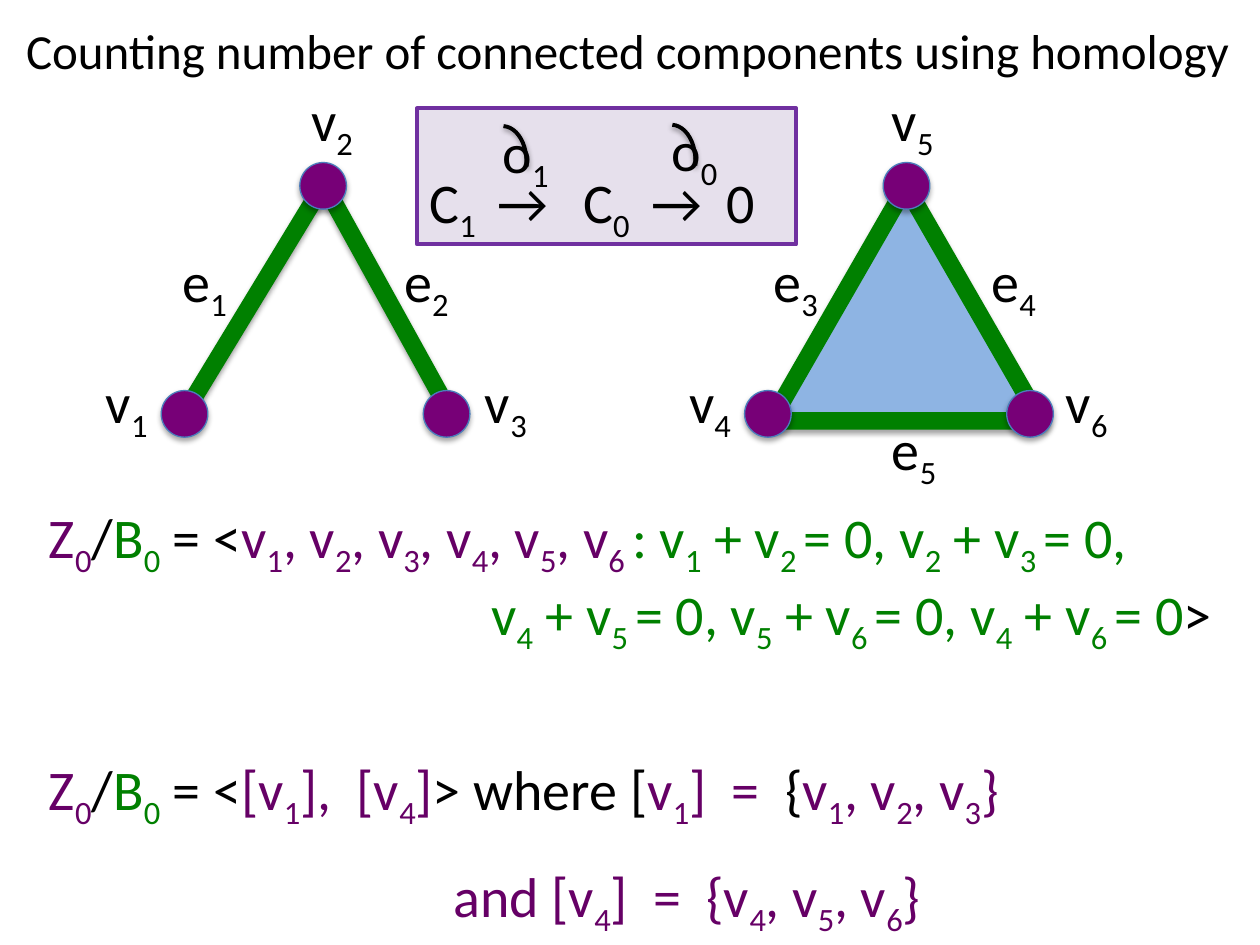
from typing import NamedTuple

import pptx
import pptx.dml.color
import pptx.enum.shapes
import pptx.enum.text
import pptx.oxml
import pptx.oxml.ns
import pptx.util
from lxml import etree

Inches = pptx.util.Inches
Pt = pptx.util.Pt
RGBColor = pptx.dml.color.RGBColor
Shapes = pptx.enum.shapes.MSO_SHAPE

BLACK = RGBColor(0x00, 0x00, 0x00)
GREEN = RGBColor(0x00, 0x80, 0x00)
PLUM = RGBColor(0x66, 0x00, 0x66)
NODE_FILL = RGBColor(0x77, 0x00, 0x77)
NODE_LINE = RGBColor(0x4B, 0x7E, 0xBC)
FACE_FILL = RGBColor(0x8E, 0xB4, 0xE3)
PANEL_FILL = RGBColor(0xE6, 0xE0, 0xEC)
PANEL_LINE = RGBColor(0x70, 0x30, 0xA0)

NODE_SIZE = 0.37
LABEL_WIDTH, LABEL_HEIGHT = 0.71, 0.64


class Label(NamedTuple):
    letter: str
    index: int
    left: float
    top: float


class Span(NamedTuple):
    """Text in one colour; every second piece between bars is a subscript."""
    text: str
    color: RGBColor = BLACK


class Line(NamedTuple):
    spans: list[Span]
    indent: float = 0
    format: dict = {}


NODES = [(left + shift, top) for shift in (0, 4.63)
         for left, top in ((1.28, 3.1), (3.36, 3.1), (2.38, 1.29))]

EDGES = [((2.57, 1.46), (3.57, 3.27)), ((1.47, 3.27), (2.57, 1.46))]

LABELS = [
    Label("v", 1, 0.74, 2.87), Label("v", 2, 2.37, 0.63), Label("v", 3, 3.75, 2.87),
    Label("v", 4, 5.37, 2.87), Label("v", 5, 6.98, 0.63), Label("v", 6, 8.36, 2.87),
    Label("e", 1, 1.35, 1.91), Label("e", 2, 3.11, 1.91), Label("e", 3, 6.04, 1.91),
    Label("e", 4, 7.77, 1.91), Label("e", 5, 6.98, 3.24),
]

BOUNDARIES = [(1, 3.77, 1.0), (0, 5.11, 0.99)]

QUOTIENT = [Span("Z|0|", PLUM), Span("/"), Span("B|0|", GREEN), Span(" = <")]

EQUATIONS = [
    Line(QUOTIENT + [
        Span("v|1|, v|2|, v|3|, v|4|, v|5|, v|6 |", PLUM),
        Span(": v|1| + v|2 |= 0, v|2| + v|3 |= 0,", GREEN)]),
    Line([Span("v|4| + v|5 |= 0, v|5| + v|6 |= 0, v|4| + v|6 |= 0", GREEN), Span(">")],
         indent=3.51),
    Line(QUOTIENT + [
        Span("[v|1|],  [v|4|]", PLUM), Span("> where ["), Span("v|1|]  =  ", PLUM),
        Span("{"), Span("v|1|, v|2|, v|3|}", PLUM)],
        format={"line_spacing": 1.4, "space_before": Pt(39)}),
    Line([Span("and [v|4|]  =  {v|4|, v|5|, v|6|}", PLUM)],
         indent=3.21, format={"line_spacing": 1.4}),
]


def add_shadow(shape, opacity: int, distance: float) -> None:
    """Give a shape or connector a soft black shadow straight below it."""
    shape._element.spPr.append(pptx.oxml.parse_xml(
        f'<a:effectLst {pptx.oxml.ns.nsdecls("a")}>'
        f'<a:outerShdw blurRad="{Pt(3.1)}" dist="{Pt(distance)}" dir="5400000" rotWithShape="0">'
        f'<a:srgbClr val="000000"><a:alpha val="{opacity * 1000}"/></a:srgbClr>'
        '</a:outerShdw></a:effectLst>'))


def add_figure(page, kind, left: float, top: float, width: float, height: float,
               fill: RGBColor | None, line: RGBColor, weight: float):
    shape = page.shapes.add_shape(kind, Inches(left), Inches(top), Inches(width), Inches(height))
    if fill is None:
        shape.fill.background()
    else:
        shape.fill.solid()
        shape.fill.fore_color.rgb = fill
    shape.line.color.rgb = line
    shape.line.width = Pt(weight)
    return shape


def add_spans(para, spans: list[Span], size: int) -> None:
    for text, color in spans:
        for place, piece in enumerate(text.split("|")):
            if not piece:
                continue
            span = para.add_run()
            span.text = piece
            for name, value in {"name": "Calibri", "size": Pt(size)}.items():
                setattr(span.font, name, value)
            span.font.color.rgb = color
            if place % 2:
                span._r.get_or_add_rPr().set("baseline", "-25000")


def add_text(page, left: float, top: float, width: float, height: float,
             lines: list[Line], size: int = 32):
    box = page.shapes.add_textbox(Inches(left), Inches(top), Inches(width), Inches(height))
    frame = box.text_frame
    frame.word_wrap = True
    frame.auto_size = pptx.enum.text.MSO_AUTO_SIZE.SHAPE_TO_FIT_TEXT
    for number, line in enumerate(lines):
        para = frame.add_paragraph() if number else frame.paragraphs[0]
        for name, value in line.format.items():
            setattr(para, name, value)
        if line.indent:
            properties = para._p.get_or_add_pPr()
            properties.set("marL", str(Inches(line.indent)))
            properties.set("indent", "0")
        add_spans(para, line.spans, size)
    return box


def add_tab_stops(para, stops: list[float]) -> None:
    tabs = etree.SubElement(para._p.get_or_add_pPr(), pptx.oxml.ns.qn("a:tabLst"))
    for stop in stops:
        etree.SubElement(tabs, pptx.oxml.ns.qn("a:tab"), pos=str(Inches(stop)), algn="l")


def add_graphs(page) -> None:
    triangle = add_figure(page, Shapes.ISOSCELES_TRIANGLE, 6.12, 1.48, 2.14, 1.86,
                          FACE_FILL, GREEN, 10)
    add_shadow(triangle, 35, 1.8)
    for start, end in EDGES:
        edge = page.shapes.add_connector(pptx.enum.shapes.MSO_CONNECTOR.STRAIGHT,
                                         *map(Inches, start + end))
        edge.line.color.rgb = GREEN
        edge.line.width = Pt(10)
        add_shadow(edge, 38, 1.6)
    for left, top in NODES:
        node = add_figure(page, Shapes.OVAL, left, top, NODE_SIZE, NODE_SIZE,
                          NODE_FILL, NODE_LINE, 0.75)
        add_shadow(node, 35, 1.8)
    for label in LABELS:
        add_text(page, label.left, label.top, LABEL_WIDTH, LABEL_HEIGHT,
                 [Line([Span(f"{label.letter}|{label.index}|")])])


def add_chain_complex(page) -> None:
    """Write the chain groups; each boundary sign is an arc over a letter o."""
    chain = add_text(page, 3.31, 1.28, 3.12, LABEL_HEIGHT,
                     [Line([Span("C|1|\t→\tC|0|\t→\t0")])])
    add_tab_stops(chain.text_frame.paragraphs[0], [0.54, 1.22, 1.76, 2.36])
    for index, left, top in BOUNDARIES:
        arc = add_figure(page, Shapes.ARC, left, top, 0.41, 0.62, None, BLACK, 2.25)
        arc.rotation = 4
        add_shadow(arc, 38, 1.6)
        add_text(page, left + 0.12, top - 0.12, 0.93, LABEL_HEIGHT,
                 [Line([Span(f"o|{index}|")])])


def main() -> None:
    deck = pptx.Presentation()
    deck.slide_width, deck.slide_height = Inches(10), Inches(7.5)
    page = deck.slides.add_slide(deck.slide_layouts[6])
    panel = add_figure(page, Shapes.RECTANGLE, 3.31, 0.86, 3.01, 1.08,
                       PANEL_FILL, PANEL_LINE, 2.25)
    panel.shadow.inherit = False
    add_graphs(page)
    add_text(page, 0.04, 0.11, 9.88, 0.57,
             [Line([Span("Counting number of connected components using homology")],
                   format={"alignment": pptx.enum.text.PP_ALIGN.CENTER})], size=28)
    add_text(page, 0.29, 3.94, 9.71, 3.01, EQUATIONS)
    add_chain_complex(page)
    deck.save("out.pptx")


if __name__ == "__main__":
    main()
